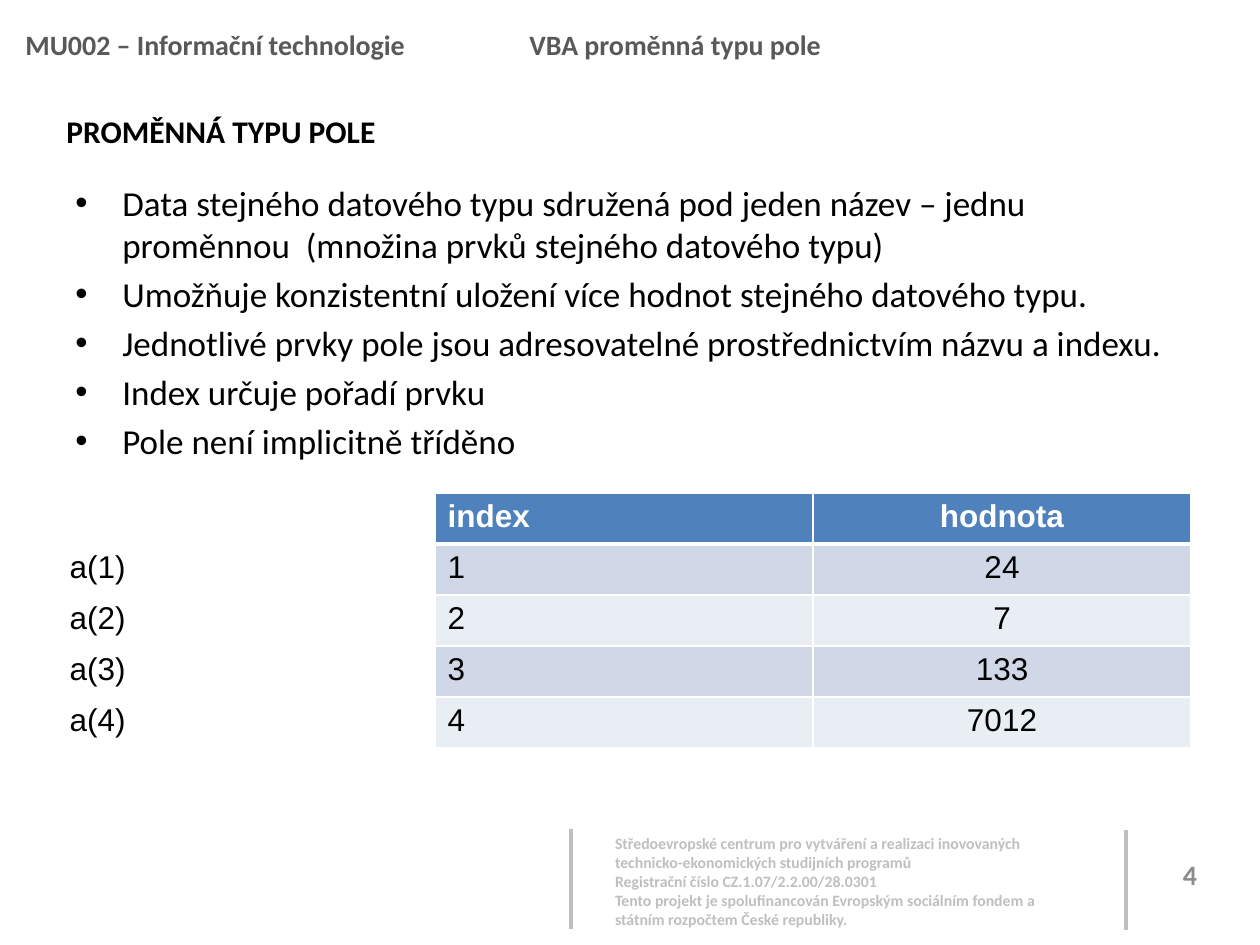
from dataclasses import dataclass, field

from lxml.etree import SubElement
from pptx import Presentation
from pptx.dml.color import RGBColor
from pptx.enum.shapes import MSO_CONNECTOR
from pptx.enum.text import MSO_ANCHOR, PP_ALIGN
from pptx.oxml.ns import qn
from pptx.util import Emu, Pt

PX = 914400 / 126
COLORS = {
    "white": "FFFFFF", "black": "000000", "header": "595959", "number": "8C8C8C",
    "footer": "BFBFBF", "table_head": "4F81BD", "band_dark": "D0D8E8", "band_light": "E9EDF4",
}


def px(n: int) -> Emu:
    return Emu(round(n * PX))


def rgb(name: str) -> RGBColor:
    return RGBColor.from_string(COLORS[name])


@dataclass
class TextBlock:
    box: tuple[int, int, int, int]
    lines: list[str]
    size: int
    color: str
    bold: bool = True
    para: dict = field(default_factory=dict)
    frame: dict = field(default_factory=dict)
    gap: int = 0
    bullet_indent: int = 0
    tab: int = 0


@dataclass
class Rule:
    x: int
    top: int
    bottom: int


def add_text(p, text: str, size: int, color: str, bold: bool, name: str) -> None:
    r = p.add_run()
    r.text = text
    for key, value in {"size": Pt(size), "bold": bold, "name": name}.items():
        setattr(r.font, key, value)
    r.font.color.rgb = rgb(color)


def add_block(s, block: TextBlock) -> None:
    tf = s.shapes.add_textbox(*map(px, block.box)).text_frame
    for key, value in {"word_wrap": True, **block.frame}.items():
        setattr(tf, key, value)
    for i, line in enumerate(block.lines):
        p = tf.add_paragraph() if i else tf.paragraphs[0]
        pPr = p._p.get_or_add_pPr()
        if block.bullet_indent:
            indent = px(block.bullet_indent)
            pPr.set("marL", str(indent))
            pPr.set("indent", str(-indent))
            SubElement(pPr, qn("a:buFont"), typeface="Arial")
            SubElement(pPr, qn("a:buChar"), char="•")
        if block.tab:
            tabs = SubElement(pPr, qn("a:tabLst"))
            SubElement(tabs, qn("a:tab"), pos=str(px(block.tab)), algn="l")
        for key, value in block.para.items():
            setattr(p, key, value)
        if i and block.gap:
            p.space_before = Pt(block.gap)
        add_text(p, line, block.size, block.color, block.bold, "Calibri")


def add_rule(s, rule: Rule) -> None:
    sp = s.shapes.add_connector(
        MSO_CONNECTOR.STRAIGHT, px(rule.x), px(rule.top), px(rule.x), px(rule.bottom))
    sp.line.color.rgb = rgb("footer")
    sp.line.width = Pt(2)
    SubElement(sp._element.spPr, qn("a:effectLst"))


def add_borders(cell, bottom: int) -> None:
    tcPr = cell._tc.get_or_add_tcPr()
    widths = {"a:lnL": 1, "a:lnR": 1, "a:lnT": 1, "a:lnB": bottom}
    for i, (tag, width) in enumerate(widths.items()):
        ln = SubElement(tcPr, qn(tag), w=str(Pt(width)))
        fill = SubElement(ln, qn("a:solidFill"))
        SubElement(fill, qn("a:srgbClr"), val=COLORS["white"])
        tcPr.insert(i, ln)


def add_array_table(s, rows: list[tuple[str, str, str]]) -> None:
    left, top, col_w, row_h = 57, 493, 378, 51
    tbl = s.shapes.add_table(
        len(rows), 3, px(left), px(top), px(3 * col_w), px(len(rows) * row_h)).table
    for i, row in enumerate(rows):
        tbl.rows[i].height = px(row_h)
        head = i == 0
        band = "table_head" if head else ("band_light", "band_dark")[i % 2]
        for j, text in enumerate(row):
            cell = tbl.cell(i, j)
            cell.fill.solid()
            cell.fill.fore_color.rgb = rgb(band if j else "white")
            add_borders(cell, 3 if head else 1)
            p = cell.text_frame.paragraphs[0]
            if j == 2:
                p.alignment = PP_ALIGN.CENTER
            if text:
                add_text(p, text, 18, "white" if head else "black", head, "Arial")


FOOTER_INSET = px(5)
BLOCKS = [
    # Project footer and slide number
    TextBlock((610, 829, 446, 106), [
        "Středoevropské centrum pro vytváření a realizaci inovovaných "
        "technicko-ekonomických studijních programů",
        "Registrační číslo CZ.1.07/2.2.00/28.0301",
        "Tento projekt je spolufinancován Evropským sociálním fondem a "
        "státním rozpočtem České republiky.",
    ], 9, "footer", frame={
        f"margin_{side}": FOOTER_INSET for side in ("left", "top", "right", "bottom")}),
    TextBlock((1147, 849, 86, 50), ["4"], 16, "number",
              para={"alignment": PP_ALIGN.CENTER},
              frame={"vertical_anchor": MSO_ANCHOR.MIDDLE}),
    # Bullets
    TextBlock((63, 175, 1134, 669), [
        "Data stejného datového typu sdružená pod jeden název – jednu "
        "proměnnou  (množina prvků stejného datového typu)",
        "Umožňuje konzistentní uložení více hodnot stejného datového typu.",
        "Jednotlivé prvky pole jsou adresovatelné prostřednictvím názvu a indexu.",
        "Index určuje pořadí prvku",
        "Pole není implicitně tříděno",
    ], 20, "black", bold=False, gap=4, bullet_indent=47),
    # Heading and course header
    TextBlock((54, 106, 1160, 50), ["PROMĚNNÁ TYPU POLE"], 18, "black"),
    TextBlock((13, 5, 1203, 63), ["MU002 – Informační technologie\tVBA proměnná typu pole"],
              16, "header", para={"line_spacing": 1.5}, tab=504),
]
RULES = [Rule(571, 829, 929), Rule(1126, 830, 930)]
ROWS = [("", "index", "hodnota")] + [
    (f"a({i})", str(i), value) for i, value in enumerate(("24", "7", "133", "7012"), 1)]


def main() -> None:
    prs = Presentation()
    prs.slide_width, prs.slide_height = px(1260), px(945)
    s = prs.slides.add_slide(prs.slide_layouts[6])
    for rule in RULES:
        add_rule(s, rule)
    for block in BLOCKS:
        add_block(s, block)
    add_array_table(s, ROWS)
    prs.save("out.pptx")


if __name__ == "__main__":
    main()
